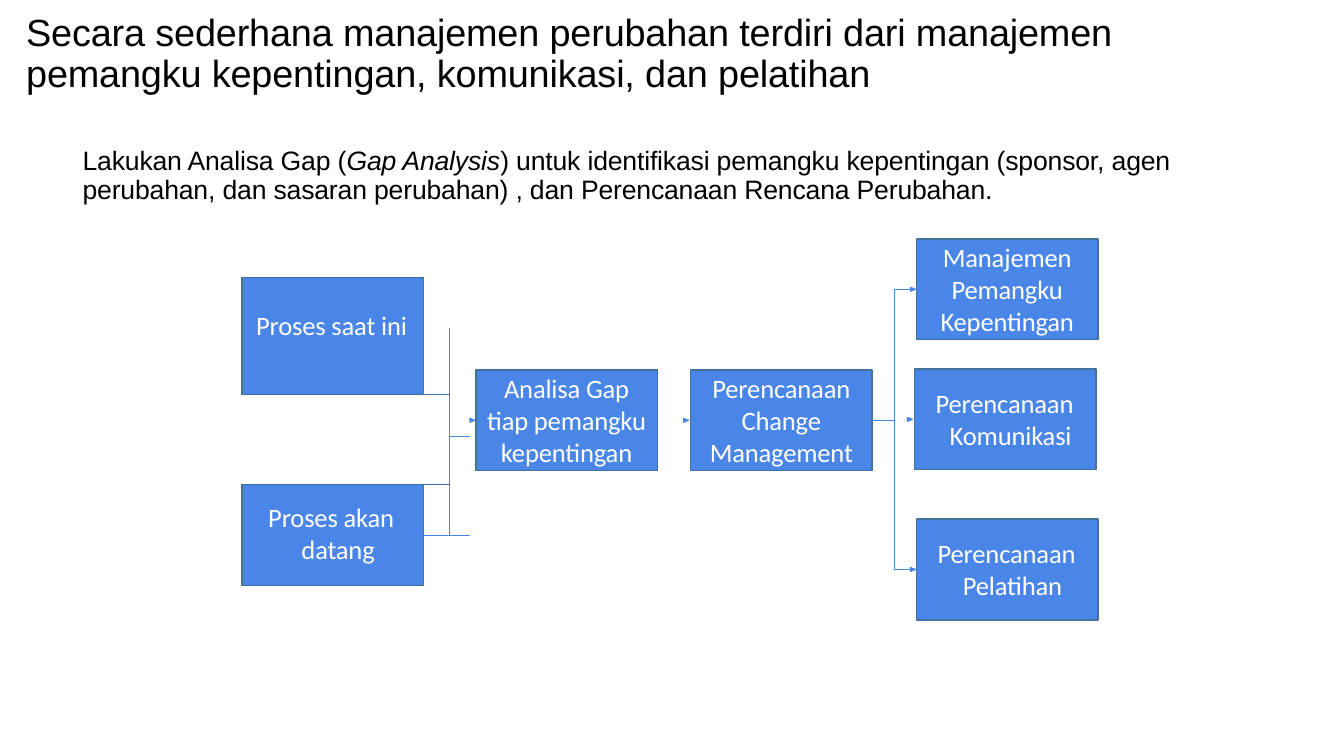
from pptx import Presentation
from pptx.util import Inches, Pt
from pptx.dml.color import RGBColor
from pptx.enum.shapes import MSO_SHAPE as Shape
from pptx.enum.text import MSO_ANCHOR as Anchor, PP_ALIGN as Align
from pptx.oxml.ns import qn
from lxml.etree import SubElement as Sub

BLUE, EDGE, WHITE, BLACK = "4A86E7", "42719B", "FFFFFF", "000000"
NOSTYLE = "{2D5ABB26-0587-4C30-8999-92F81FD0307C}"


def paint(form, color):
    form.solid()
    form.fore_color.rgb = RGBColor.from_string(color)


def write(para, lines, size, font, color, left=0, hang=0):
    props = para._p.get_or_add_pPr()
    props.set("marL", str(Inches(left)))
    props.set("indent", str(Inches(hang)))
    for num, line in enumerate(lines):
        if num:
            para.add_line_break()
        for text, slant in line:
            run = para.add_run()
            run.text = text
            run.font.size = Pt(size)
            run.font.name = font
            run.font.italic = slant
            run.font.color.rgb = RGBColor.from_string(color)
            run._r.get_or_add_rPr().set("spc", "-10")


deck = Presentation()
deck.slide_width, deck.slide_height = Inches(13.33), Inches(7.5)
slide = deck.slides.add_slide(deck.slide_layouts[6])
shapes = slide.shapes

title = [("Secara sederhana manajemen perubahan terdiri dari manajemen "
          "pemangku kepentingan, komunikasi, dan pelatihan", False)]
intro = [("Lakukan Analisa Gap (", False), ("Gap Analysis", True),
         (") untuk identifikasi pemangku kepentingan (sponsor, agen "
          "perubahan, dan sasaran perubahan) , dan Perencanaan Rencana Perubahan.", False)]
for x, y, w, h, top, size, pitch, anchor, line in [
        (0.25, 0.07, 11.54, 0.88, 0.06, 27, 29.2, Anchor.MIDDLE, title),
        (0.81, 1.41, 10.97, 0.63, 0.05, 19, 20.5, Anchor.TOP, intro)]:
    frame = shapes.add_textbox(Inches(x), Inches(y), Inches(w), Inches(h)).text_frame
    frame.word_wrap = True
    frame.vertical_anchor = anchor
    frame.margin_left = frame.margin_right = frame.margin_bottom = 0
    frame.margin_top = Inches(top)
    para = frame.paragraphs[0]
    para.line_spacing = Pt(pitch)
    write(para, [line], size, "Arial", BLACK, 0.01)

cols, rows = [1.8, 0.26, 0.2], [0.5, 0.66, 0.42, 0.48, 0.5, 0.5]
table = shapes.add_table(6, 3, Inches(2.4), Inches(2.75),
                         Inches(sum(cols)), Inches(sum(rows))).table
table.first_row = table.horz_banding = False
table._tbl.tblPr.find(qn("a:tableStyleId")).text = NOSTYLE
for col, w in zip(table.columns, cols):
    col.width = Inches(w)
for row, h in zip(table.rows, rows):
    row.height = Inches(h)
for cell in table.iter_cells():
    cell.margin_left = cell.margin_right = cell.margin_top = cell.margin_bottom = 0
    cell.fill.background()

dark, thin, bold = (EDGE, 1), (BLUE, 0.75), (BLUE, 1)
sides = {
    (0, 0): {"L": dark, "R": dark, "T": dark, "B": dark},
    (0, 1): {"L": dark},
    (1, 1): {"L": dark, "R": thin},
    (1, 2): {"L": thin, "B": bold},
    (2, 0): {"R": thin, "T": dark},
    (3, 2): {"L": thin, "T": bold},
    (4, 0): {"L": dark, "R": dark, "T": dark, "B": dark},
    (4, 1): {"L": dark, "R": thin, "T": dark, "B": thin},
    (5, 1): {"L": dark, "T": thin},
}
for (r, c), edges in sides.items():
    props = table.cell(r, c)._tc.get_or_add_tcPr()
    spot = 0
    for side in "LRTB":
        if side in edges:
            color, width = edges[side]
            line = Sub(props, qn("a:ln" + side), w=str(Pt(width)))
            Sub(Sub(line, qn("a:solidFill")), qn("a:srgbClr"), val=color)
            props.insert(spot, line)
            spot += 1
for r, c, down, right in [(0, 0, 2, 1), (0, 1, 1, 2), (1, 2, 2, 1), (2, 0, 2, 2),
                          (3, 2, 2, 1), (4, 0, 2, 1), (5, 1, 1, 2)]:
    table.cell(r, c).merge(table.cell(r + down - 1, c + right - 1))
for r, top, left, hang, lines in [
        (0, 0.33, 0.14, 0, ["Proses saat ini"]),
        (4, 0.17, 0.59, -0.33, ["Proses akan", "datang"])]:
    cell = table.cell(r, 0)
    cell.margin_top = Inches(top)
    paint(cell.fill, BLUE)
    write(cell.text_frame.paragraphs[0], [[(t, False)] for t in lines],
          19, "Calibri", WHITE, left, hang)

for x, y, top, align, left, hang, lines in [
        (4.72, 3.67, 0.02, Align.CENTER, 0, 0, ["Analisa Gap", "tiap pemangku", "kepentingan"]),
        (6.85, 3.67, 0.02, Align.CENTER, 0, 0, ["Perencanaan", "Change", "Management"]),
        (9.09, 5.15, 0.18, Align.LEFT, 0.46, -0.25, ["Perencanaan", "Pelatihan"]),
        (9.07, 3.66, 0.18, Align.LEFT, 0.35, -0.14, ["Perencanaan", "Komunikasi"]),
        (9.09, 2.37, 0.02, Align.CENTER, 0, 0, ["Manajemen", "Pemangku", "Kepentingan"])]:
    box = shapes.add_shape(Shape.RECTANGLE, Inches(x), Inches(y), Inches(1.8), Inches(1))
    box.shadow.inherit = False
    paint(box.fill, BLUE)
    paint(box.line.fill, EDGE)
    box.line.width = Pt(1)
    frame = box.text_frame
    frame.word_wrap = True
    frame.vertical_anchor = Anchor.TOP
    frame.margin_left = frame.margin_right = frame.margin_bottom = 0
    frame.margin_top = Inches(top)
    para = frame.paragraphs[0]
    para.alignment = align
    write(para, [[(t, False)] for t in lines], 19, "Calibri", WHITE, left, hang)

paths = [([(8.65, 4.17), (8.87, 4.17), (8.87, y), (9.03, y)], False) for y in (5.65, 2.87)]
for x, y in [(4.66, 4.17), (6.78, 4.17), (9, 4.16), (9.03, 5.65), (9.03, 2.87)]:
    paths.append(([(x, y + 0.02), (x + 0.05, y), (x, y - 0.02)], True))
for spots, closed in paths:
    spots = [(Inches(x), Inches(y)) for x, y in spots]
    pen = shapes.build_freeform(*spots[0])
    pen.add_line_segments(spots[1:], close=closed)
    mark = pen.convert_to_shape()
    mark.shadow.inherit = False
    paint(mark.line.fill, BLUE)
    mark.line.width = Pt(0.75)
    if closed:
        paint(mark.fill, BLUE)
    else:
        mark.fill.background()

deck.save("out.pptx")
